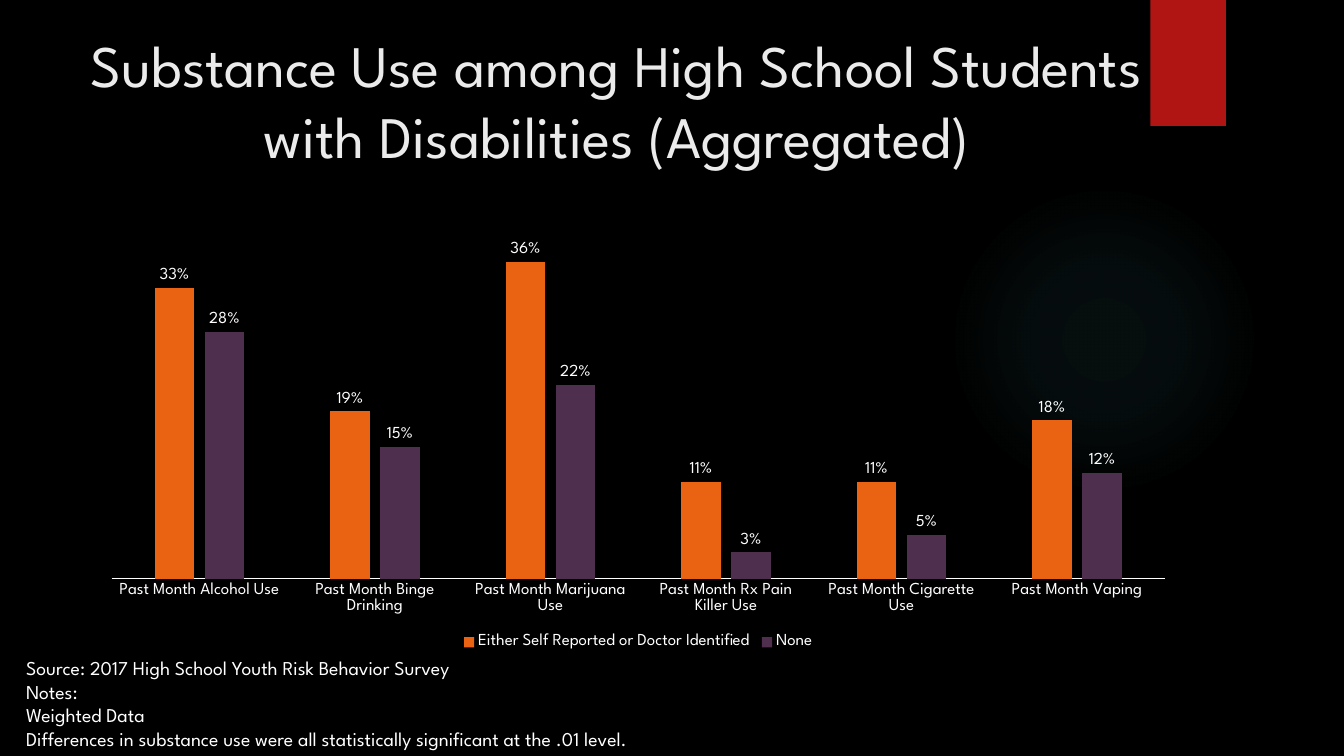
"""Build a slide charting substance use among students with disabilities."""
import pptx
import pptx.chart.data
import pptx.dml.color
import pptx.enum.chart
import pptx.enum.shapes
import pptx.enum.text
import pptx.oxml
import pptx.oxml.ns
import pptx.util

Inches = pptx.util.Inches
FONT = "League Spartan"
WHITE = "FFFFFF"


def paint(target, color):
    if hasattr(target, "solid"):
        target.solid()
        target = target.fore_color
    target.rgb = pptx.dml.color.RGBColor.from_string(color)


def write(font_owner, text=None, size=12, color=WHITE, align=None):
    if text is not None:
        font_owner.text = text
    if align is not None:
        font_owner.alignment = align
    font_owner.font.name = FONT
    font_owner.font.size = pptx.util.Pt(size)
    paint(font_owner.font.fill, color)


deck = pptx.Presentation()
deck.slide_width, deck.slide_height = Inches(13.33), Inches(7.5)
slide = deck.slides.add_slide(deck.slide_layouts[5])
paint(slide.background.fill, "000000")

glow = slide.shapes.add_shape(
    pptx.enum.shapes.MSO_SHAPE.OVAL,
    Inches(9.41), Inches(1.83), Inches(3.08), Inches(3.08))
glow.shadow.inherit = False
glow.line.fill.background()
glow_stops = "".join(
    f'<a:gs pos="{position * 1000}"><a:srgbClr val="50B9C1">'
    f'<a:alpha val="{opacity * 1000}"/></a:srgbClr></a:gs>'
    for position, opacity in [(0, 7), (36, 6), (69, 0)])
glow._element.spPr.insert(2, pptx.oxml.parse_xml(
    f'<a:gradFill {pptx.oxml.ns.nsdecls("a")}><a:gsLst>{glow_stops}</a:gsLst>'
    '<a:path path="circle"><a:fillToRect l="50000" t="50000" r="50000" b="50000"/>'
    '</a:path></a:gradFill>'))

ribbon = slide.shapes.add_shape(
    pptx.enum.shapes.MSO_SHAPE.RECTANGLE,
    Inches(11.41), 0, Inches(0.75), Inches(1.25))
ribbon.shadow.inherit = False
ribbon.line.fill.background()
paint(ribbon.fill, "B01513")

title = slide.shapes.title
title.left, title.top = Inches(0.48), Inches(0.22)
title.width, title.height = Inches(11.27), Inches(1.53)
title.text_frame.word_wrap = True
title.text_frame.auto_size = pptx.enum.text.MSO_AUTO_SIZE.NONE
title.text_frame.vertical_anchor = pptx.enum.text.MSO_ANCHOR.MIDDLE
write(title.text_frame.paragraphs[0],
      "Substance Use among High School Students with Disabilities (Aggregated)",
      size=42, color="EBEBEB", align=pptx.enum.text.PP_ALIGN.CENTER)

usage = pptx.chart.data.CategoryChartData(number_format="0%")
usage.categories = [
    "Past Month Alcohol Use", "Past Month Binge Drinking",
    "Past Month Marijuana Use", "Past Month Rx Pain Killer Use",
    "Past Month Cigarette Use", "Past Month Vaping"]
usage.add_series("Either Self Reported or Doctor Identified",
                 [0.33, 0.19, 0.36, 0.11, 0.11, 0.18])
usage.add_series("None", [0.28, 0.15, 0.22, 0.03, 0.05, 0.12])
chart = slide.shapes.add_chart(
    pptx.enum.chart.XL_CHART_TYPE.COLUMN_CLUSTERED,
    Inches(0.89), Inches(2.16), Inches(10.88), Inches(4.33), usage).chart
chart.has_title = False
write(chart, size=10)
chart.has_legend = True
chart.legend.position = pptx.enum.chart.XL_LEGEND_POSITION.BOTTOM
chart.legend.include_in_layout = False
write(chart.legend)

behaviors = chart.category_axis
behaviors.major_tick_mark = pptx.enum.chart.XL_TICK_MARK.NONE
behaviors.format.line.width = pptx.util.Pt(0.75)
paint(behaviors.format.line.fill, WHITE)
write(behaviors.tick_labels)

share = chart.value_axis
share.visible = False
share.has_major_gridlines = False
share.minimum_scale, share.maximum_scale = 0, 0.4

columns = chart.plots[0]
columns.gap_width, columns.overlap = 219, -27
columns.vary_by_categories = False
for group, color in zip(columns.series, ["EA6312", "4F2F4E"]):
    paint(group.format.fill, color)
    labels = group.data_labels
    labels.show_value = True
    labels.position = pptx.enum.chart.XL_LABEL_POSITION.OUTSIDE_END
    labels.number_format, labels.number_format_is_linked = "0%", False
    write(labels)

source_notes = slide.shapes.add_textbox(
    Inches(0.16), Inches(6.46), Inches(13.17), Inches(1.04)).text_frame
source_notes.word_wrap = True
for index, line in enumerate([
        "Source: 2017 High School Youth Risk Behavior Survey",
        "Notes:",
        "Weighted Data",
        "Differences in substance use were all statistically significant at the .01 level."]):
    write(source_notes.add_paragraph() if index else source_notes.paragraphs[0],
          line, size=14)

deck.save("out.pptx")
